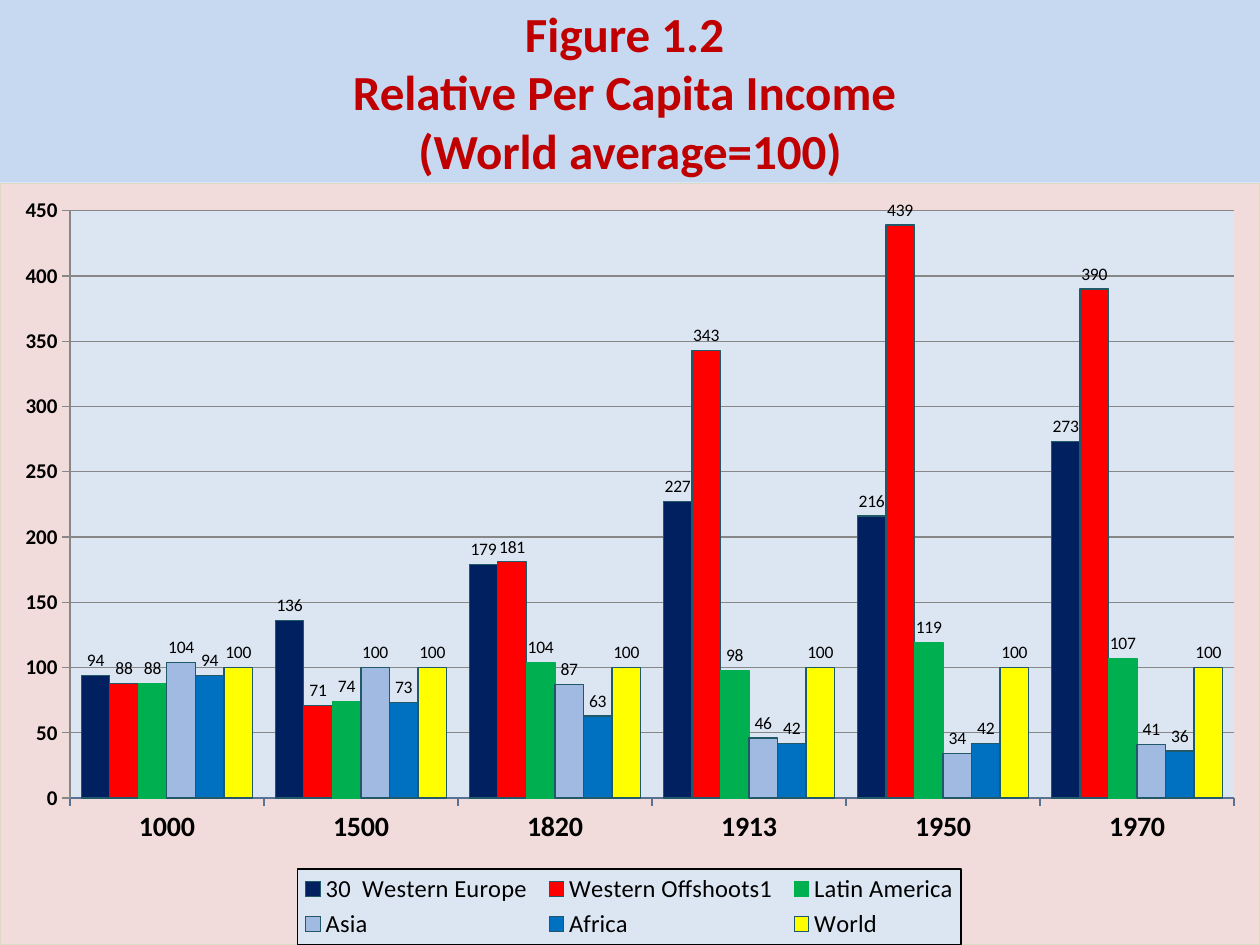
import dataclasses

import lxml.etree
import pptx
import pptx.chart.data
import pptx.dml.color
import pptx.enum.chart
import pptx.enum.shapes
import pptx.enum.text
import pptx.oxml
import pptx.oxml.ns
import pptx.util

RGBColor = pptx.dml.color.RGBColor
EMU_PER_PX = 9144  # 100 px to the inch
FONT = "Calibri"

BLACK = RGBColor(0x00, 0x00, 0x00)
TITLE_FILL = RGBColor(0xC6, 0xD9, 0xF1)
TITLE_TEXT = RGBColor(0xC0, 0x00, 0x00)
CHART_FILL = RGBColor(0xF2, 0xDC, 0xDB)
CHART_BORDER = RGBColor(0xDD, 0xD9, 0xC3)
PLOT_FILL = RGBColor(0xDC, 0xE6, 0xF2)
GRID = RGBColor(0x87, 0x87, 0x87)
AXIS = RGBColor(0x57, 0x72, 0x93)
TEAL = RGBColor(0x21, 0x59, 0x68)
NAVY = RGBColor(0x00, 0x20, 0x60)
RED = RGBColor(0xFF, 0x00, 0x00)
GREEN = RGBColor(0x00, 0xB0, 0x50)
PALE_BLUE = RGBColor(0xA0, 0xBA, 0xE1)
BLUE = RGBColor(0x00, 0x70, 0xC0)
YELLOW = RGBColor(0xFF, 0xFF, 0x00)


@dataclasses.dataclass(frozen=True)
class Box:
    left: int
    top: int
    width: int
    height: int

    def emu(self) -> list[int]:
        return [px * EMU_PER_PX for px in dataclasses.astuple(self)]


@dataclasses.dataclass(frozen=True)
class Region:
    name: str
    incomes: tuple[int, ...]
    fill: RGBColor
    outline: RGBColor = TEAL


TITLE_BOX = Box(0, 0, 1000, 145)
CHART_BOX = Box(0, 145, 1000, 605)
# Boxes inside the chart, measured from its corner
PLOT_BOX = Box(55, 22, 925, 467)
LEGEND_BOX = Box(236, 545, 527, 60)

TITLE = "Figure 1.2 \vRelative Per Capita Income \v(World average=100)"
YEARS = ("1000", "1500", "1820", "1913", "1950", "1970")
REGIONS = (
    Region("30  Western Europe ", (94, 136, 179, 227, 216, 273), NAVY),
    Region("Western Offshoots1 ", (88, 71, 181, 343, 439, 390), RED),
    Region("Latin America", (88, 74, 104, 98, 119, 107), GREEN, GREEN),
    Region("Asia ", (104, 100, 87, 46, 34, 41), PALE_BLUE),
    Region("Africa ", (94, 73, 63, 42, 42, 36), BLUE),
    Region("World ", (100,) * 6, YELLOW),
)


def set_line(line, color: RGBColor) -> None:
    line.color.rgb = color
    line.width = pptx.util.Pt(0.75)


def area_format(fill: RGBColor, border: RGBColor | None = None):
    """Shape properties for chart parts that have no public format."""
    outline = "<a:noFill/>"
    if border is not None:
        outline = f'<a:solidFill><a:srgbClr val="{border}"/></a:solidFill>'
    return pptx.oxml.parse_xml(
        f'<c:spPr {pptx.oxml.ns.nsdecls("c", "a")}>'
        f'<a:solidFill><a:srgbClr val="{fill}"/></a:solidFill>'
        f'<a:ln w="9525">{outline}</a:ln></c:spPr>'
    )


def manual_layout(box: Box, inner: bool = False):
    target = '<c:layoutTarget val="inner"/>' if inner else ""
    return pptx.oxml.parse_xml(
        f'<c:layout {pptx.oxml.ns.nsdecls("c")}><c:manualLayout>{target}'
        '<c:xMode val="edge"/><c:yMode val="edge"/>'
        f'<c:x val="{box.left / CHART_BOX.width:.3f}"/>'
        f'<c:y val="{box.top / CHART_BOX.height:.3f}"/>'
        f'<c:w val="{box.width / CHART_BOX.width:.3f}"/>'
        f'<c:h val="{box.height / CHART_BOX.height:.3f}"/>'
        "</c:manualLayout></c:layout>"
    )


def remove_layout(element) -> None:
    for layout in element.findall(pptx.oxml.ns.qn("c:layout")):
        element.remove(layout)


def add_title(slide) -> None:
    shape = slide.shapes.add_shape(
        pptx.enum.shapes.MSO_SHAPE.RECTANGLE, *TITLE_BOX.emu())
    shape.shadow.inherit = False
    shape.fill.solid()
    shape.fill.fore_color.rgb = TITLE_FILL
    shape.line.fill.background()
    frame = shape.text_frame
    frame.word_wrap = True
    frame.vertical_anchor = pptx.enum.text.MSO_ANCHOR.MIDDLE
    paragraph = frame.paragraphs[0]
    paragraph.text = TITLE
    paragraph.alignment = pptx.enum.text.PP_ALIGN.CENTER
    font = paragraph.font
    font.name, font.size, font.bold = FONT, pptx.util.Pt(28), True
    font.color.rgb = TITLE_TEXT


def style_axis(axis, size: int, color: RGBColor) -> None:
    axis.major_tick_mark = pptx.enum.chart.XL_TICK_MARK.OUTSIDE
    axis.minor_tick_mark = pptx.enum.chart.XL_TICK_MARK.NONE
    font = axis.tick_labels.font
    font.name, font.size, font.bold = FONT, pptx.util.Pt(size), True
    font.color.rgb = BLACK
    set_line(axis.format.line, color)


def style_series(series, region: Region) -> None:
    series.invert_if_negative = False
    series.format.fill.solid()
    series.format.fill.fore_color.rgb = region.fill
    set_line(series.format.line, region.outline)
    labels = series.data_labels
    labels.show_value = True
    labels.position = pptx.enum.chart.XL_LABEL_POSITION.OUTSIDE_END


def add_income_chart(slide) -> None:
    data = pptx.chart.data.CategoryChartData()
    data.categories = YEARS
    for region in REGIONS:
        data.add_series(region.name, region.incomes)
    chart = slide.shapes.add_chart(
        pptx.enum.chart.XL_CHART_TYPE.COLUMN_CLUSTERED,
        *CHART_BOX.emu(), data).chart
    chart.has_title = False
    chart.font.name, chart.font.size = FONT, pptx.util.Pt(10)
    chart.font.color.rgb = BLACK

    # Axes and gridlines
    style_axis(chart.category_axis, 16, AXIS)
    axis = chart.value_axis
    style_axis(axis, 12, GRID)
    axis.minimum_scale, axis.maximum_scale, axis.major_unit = 0, 450, 50
    axis.has_major_gridlines = True
    set_line(axis.major_gridlines.format.line, GRID)

    # Columns
    plot = chart.plots[0]
    plot.vary_by_categories = False
    plot.gap_width, plot.overlap = 80, 0
    for series, region in zip(plot.series, REGIONS):
        style_series(series, region)

    # Legend
    chart.has_legend = True
    legend = chart.legend
    legend.position = pptx.enum.chart.XL_LEGEND_POSITION.BOTTOM
    legend.include_in_layout = False
    legend.font.name, legend.font.size = FONT, pptx.util.Pt(14)
    legend.font.color.rgb = BLACK

    # Backgrounds and placement
    qn = pptx.oxml.ns.qn
    chart_element = chart.element.find(qn("c:chart"))
    chart_element.addnext(area_format(CHART_FILL, CHART_BORDER))
    plot_area = chart_element.find(qn("c:plotArea"))
    remove_layout(plot_area)
    plot_area.insert(0, manual_layout(PLOT_BOX, inner=True))
    plot_area.append(area_format(PLOT_FILL))
    legend_element = chart_element.find(qn("c:legend"))
    remove_layout(legend_element)
    legend_element.find(qn("c:legendPos")).addnext(manual_layout(LEGEND_BOX))
    legend_element.find(qn("c:overlay")).addnext(area_format(PLOT_FILL, BLACK))


def main() -> None:
    presentation = pptx.Presentation()
    presentation.slide_width = 1000 * EMU_PER_PX
    presentation.slide_height = 750 * EMU_PER_PX
    slide = presentation.slides.add_slide(presentation.slide_layouts[6])
    add_title(slide)
    add_income_chart(slide)
    presentation.save("out.pptx")


if __name__ == "__main__":
    main()
